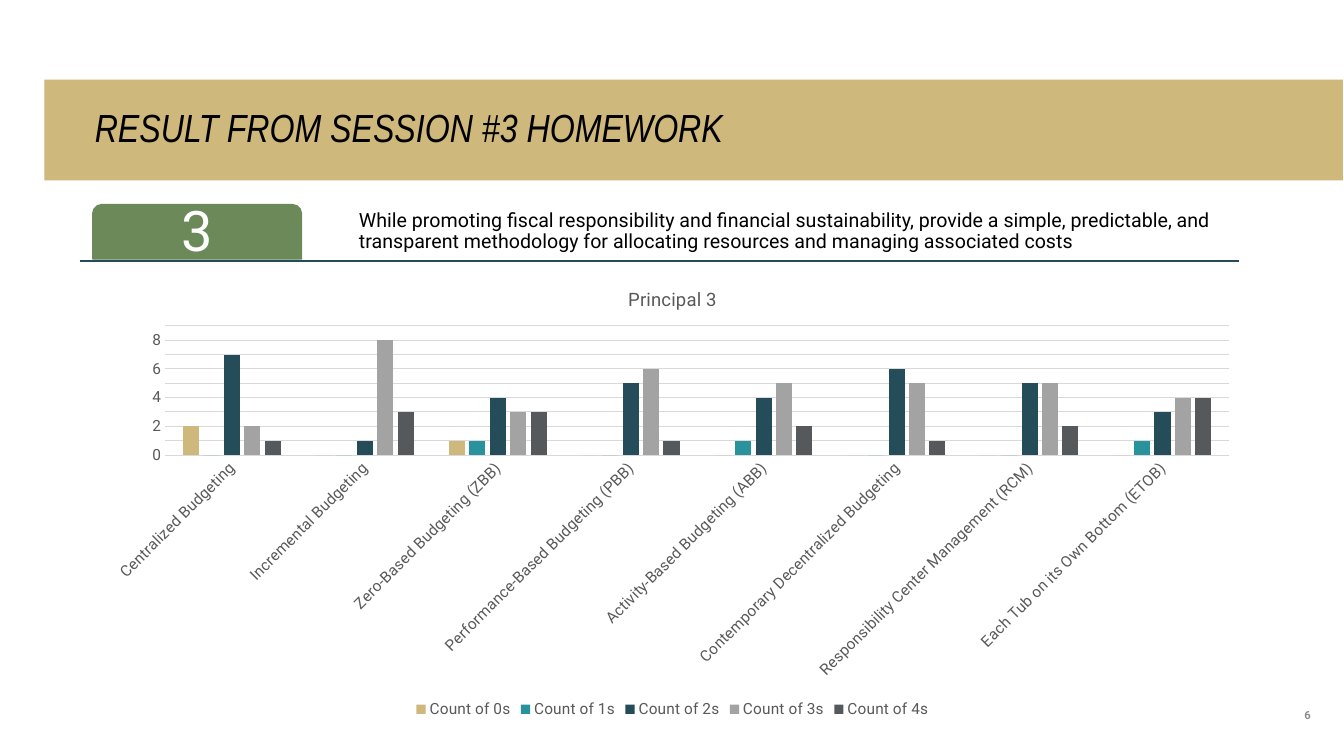
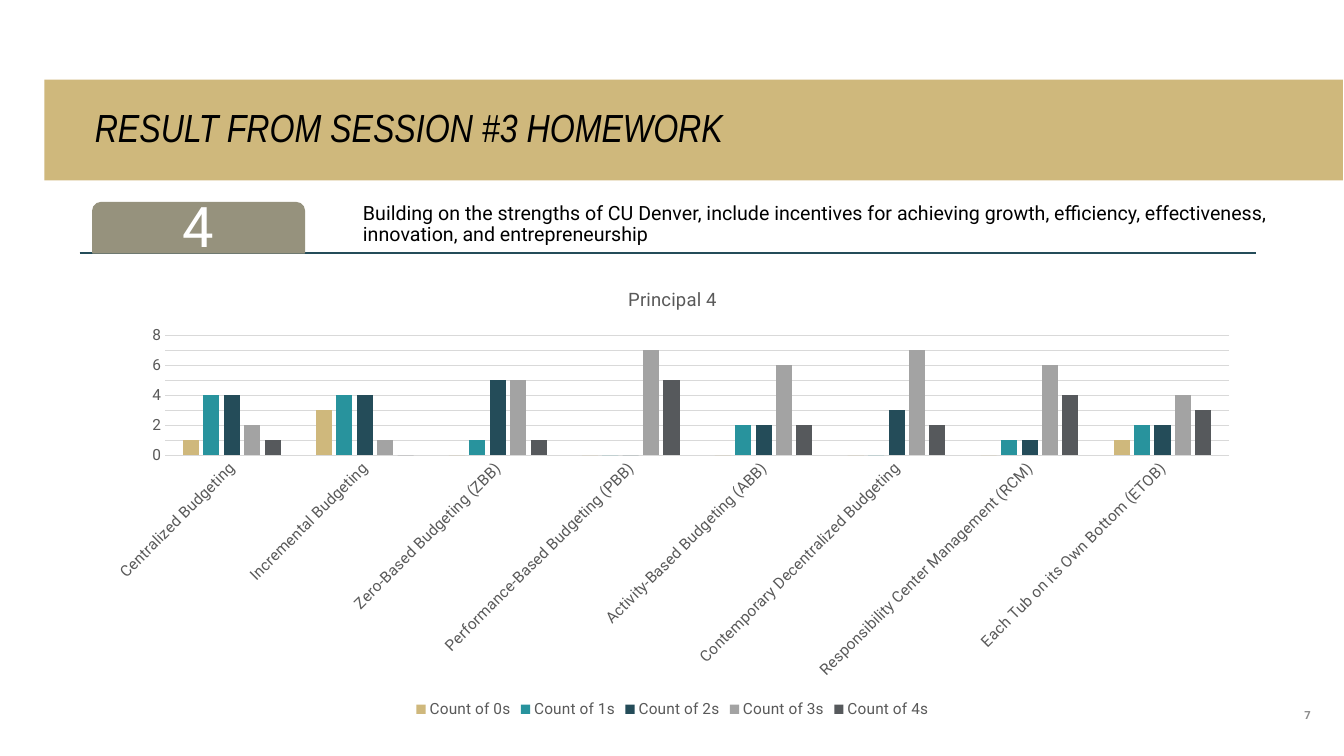
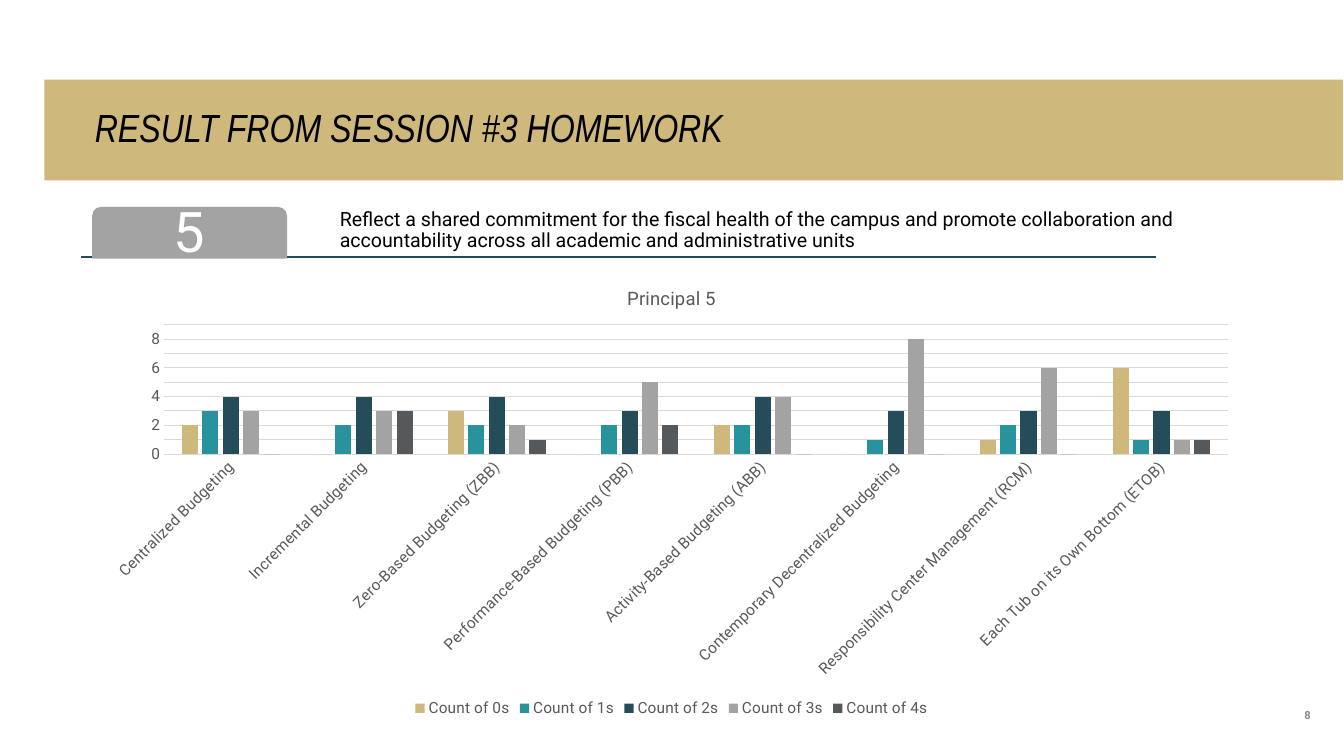
from dataclasses import dataclass

from lxml.etree import SubElement
from pptx import Presentation
from pptx.chart.data import CategoryChartData
from pptx.dml.color import RGBColor
from pptx.enum.chart import XL_CHART_TYPE, XL_LEGEND_POSITION, XL_TICK_MARK
from pptx.enum.shapes import MSO_CONNECTOR, MSO_SHAPE
from pptx.enum.text import MSO_ANCHOR, MSO_AUTO_SIZE, PP_ALIGN
from pptx.oxml.ns import qn
from pptx.slide import Slide
from pptx.text.text import Font, TextFrame
from pptx.util import Inches, Pt

# Shared style
COLORS = {
    "gold": "CFB87C", "teal": "28939D", "navy": "244C59", "gray": "A3A3A3",
    "slate": "56595C", "green": "6B8959", "taupe": "96927D", "grid": "D9D9D9",
    "label": "595959", "number": "8C8C8C", "black": "000000", "white": "FFFFFF",
}
TITLE = "RESULT FROM SESSION #3 HOMEWORK"
TITLE_FONT, BODY_FONT = "Arial Narrow", "Roboto"

CATEGORIES = (
    "Centralized Budgeting",
    "Incremental Budgeting",
    "Zero-Based Budgeting (ZBB)",
    "Performance-Based Budgeting (PBB)",
    "Activity-Based Budgeting (ABB)",
    "Contemporary Decentralized Budgeting",
    "Responsibility Center Management (RCM)",
    "Each Tub on its Own Bottom (ETOB)",
)
SERIES_COLORS = ("gold", "teal", "navy", "gray", "slate")


@dataclass(frozen=True)
class Box:
    left: float
    top: float
    width: float
    height: float

    def inches(self) -> tuple[int, ...]:
        return tuple(Inches(v) for v in (self.left, self.top, self.width, self.height))


@dataclass(frozen=True)
class Principle:
    number: int
    page: int
    text: str
    color: str
    tab: Box
    text_box: Box
    rule: tuple[float, float, float]  # left, right, height on the slide
    chart: Box
    axis_max: int
    counts: tuple[tuple[int, ...], ...]  # one row per score, 0 to 4


PRINCIPLES = (
    Principle(
        3, 6,
        "While promoting fiscal responsibility and financial sustainability, provide a "
        "simple, predictable, and transparent methodology for allocating resources and "
        "managing associated costs",
        "green", Box(0.92, 2.03, 2.07, 0.54), Box(3.53, 2.03, 9.02, 0.53),
        (0.79, 12.29, 2.59), Box(0.92, 2.67, 11.5, 4.5), 9,
        ((2, 0, 1, 0, 0, 0, 0, 0),
         (0, 0, 1, 0, 1, 0, 0, 1),
         (7, 1, 4, 5, 4, 6, 5, 3),
         (2, 8, 3, 6, 5, 5, 5, 4),
         (1, 3, 3, 1, 2, 1, 2, 4)),
    ),
    Principle(
        4, 7,
        "Building on the strengths of CU Denver, include incentives for achieving growth, "
        "efficiency, effectiveness, innovation, and entrepreneurship",
        "taupe", Box(0.92, 2.01, 2.1, 0.5), Box(3.57, 1.98, 9.15, 0.5),
        (0.79, 12.46, 2.51), Box(0.92, 2.67, 11.5, 4.5), 8,
        ((1, 3, 0, 0, 0, 0, 0, 1),
         (4, 4, 1, 0, 2, 0, 1, 2),
         (4, 4, 5, 0, 2, 3, 1, 2),
         (2, 1, 5, 7, 6, 7, 6, 4),
         (1, 0, 1, 5, 2, 2, 4, 3)),
    ),
    Principle(
        5, 8,
        "Reflect a shared commitment for the fiscal health of the campus and promote "
        "collaboration and accountability across all academic and administrative units",
        "gray", Box(0.92, 2.06, 1.92, 0.5), Box(3.34, 2.04, 8.36, 0.5),
        (0.8, 11.47, 2.55), Box(0.91, 2.66, 11.5, 4.5), 9,
        ((2, 0, 3, 0, 2, 0, 1, 6),
         (3, 2, 2, 2, 2, 1, 2, 1),
         (4, 4, 4, 3, 4, 3, 3, 3),
         (3, 3, 2, 5, 4, 8, 6, 1),
         (0, 3, 1, 2, 0, 0, 0, 1)),
    ),
)


def rgb(name: str) -> RGBColor:
    return RGBColor.from_string(COLORS[name])


def set_font(font: Font, size: float, color: str, name: str = BODY_FONT,
             bold: bool = False, italic: bool = False) -> None:
    font.size, font.name = Pt(size), name
    font.bold, font.italic = bold, italic
    font.color.rgb = rgb(color)


def set_text(tf: TextFrame, text: str, size: float, color: str,
             insets: tuple[float, float, float, float],
             align: PP_ALIGN = PP_ALIGN.LEFT, anchor: MSO_ANCHOR = MSO_ANCHOR.MIDDLE,
             name: str = BODY_FONT, bold: bool = False, italic: bool = False) -> None:
    tf.word_wrap = True
    tf.auto_size = MSO_AUTO_SIZE.NONE
    tf.vertical_anchor = anchor
    tf.margin_left, tf.margin_top, tf.margin_right, tf.margin_bottom = map(Inches, insets)
    p = tf.paragraphs[0]
    p.text = text
    p.alignment, p.line_spacing = align, 0.9
    set_font(p.font, size, color, name, bold, italic)


def add_title(s: Slide) -> None:
    title = s.shapes.title
    title.left, title.top, title.width, title.height = Box(0.44, 0.79, 12.88, 1).inches()
    title.fill.solid()
    title.fill.fore_color.rgb = rgb("gold")
    set_text(title.text_frame, TITLE, 28, "black", (0.5, 0.05, 1, 0.05),
             name=TITLE_FONT, italic=True)


def add_page_number(s: Slide, page: int) -> None:
    box = s.shapes.add_textbox(*Box(12.15, 6.66, 0.85, 0.5).inches())
    set_text(box.text_frame, str(page), 8, "number", (0, 0, 0, 0),
             PP_ALIGN.RIGHT, MSO_ANCHOR.BOTTOM, bold=True)


def add_heading(s: Slide, item: Principle) -> None:
    # Rule under the heading
    left, right, y = map(Inches, item.rule)
    rule = s.shapes.add_connector(MSO_CONNECTOR.STRAIGHT, left, y, right, y)
    rule.line.color.rgb = rgb("navy")
    rule.line.width = Pt(1)
    SubElement(rule._element.spPr, qn("a:effectLst"))

    # Statement
    box = s.shapes.add_textbox(*item.text_box.inches())
    set_text(box.text_frame, item.text, 14, "black", (0.03,) * 4)

    # Numbered tab
    tab = s.shapes.add_shape(MSO_SHAPE.ROUND_2_SAME_RECTANGLE, *item.tab.inches())
    tab.shadow.inherit = False
    tab.fill.solid()
    tab.fill.fore_color.rgb = tab.line.color.rgb = rgb(item.color)
    tab.line.width = Pt(1)
    set_text(tab.text_frame, str(item.number), 40, "white", (0.08,) * 4, PP_ALIGN.CENTER)


def add_counts_chart(s: Slide, item: Principle) -> None:
    data = CategoryChartData(number_format="General")
    data.categories = CATEGORIES
    for score, counts in enumerate(item.counts):
        data.add_series(f"Count of {score}s", counts)
    chart = s.shapes.add_chart(XL_CHART_TYPE.COLUMN_CLUSTERED, *item.chart.inches(), data).chart
    set_font(chart.font, 11, "black")

    # Title and legend
    chart.has_title = True
    p = chart.chart_title.text_frame.paragraphs[0]
    p.text = f"Principal {item.number}"
    set_font(p.font, 13.2, "label")
    chart.chart_title.include_in_layout = False
    chart.has_legend = True
    chart.legend.position = XL_LEGEND_POSITION.BOTTOM
    chart.legend.include_in_layout = False
    set_font(chart.legend.font, 11, "label")

    # Columns
    plot = chart.plots[0]
    plot.gap_width, plot.overlap, plot.vary_by_categories = 219, -27, False
    for series, color in zip(plot.series, SERIES_COLORS):
        series.format.fill.solid()
        series.format.fill.fore_color.rgb = rgb(color)

    # Axes
    cat_axis, val_axis = chart.category_axis, chart.value_axis
    for axis in (cat_axis, val_axis):
        axis.major_tick_mark = axis.minor_tick_mark = XL_TICK_MARK.NONE
        set_font(axis.tick_labels.font, 11, "label")
    val_axis.minimum_scale, val_axis.maximum_scale, val_axis.major_unit = 0, item.axis_max, 1
    val_axis.has_major_gridlines = True
    val_axis.format.line.fill.background()
    for line in (cat_axis.format.line, val_axis.major_gridlines.format.line):
        line.color.rgb = rgb("grid")
        line.width = Pt(0.75)
    # Slanted category labels
    cat_axis._element.xpath("c:txPr/a:bodyPr")[0].set("rot", str(-45 * 60000))


def main() -> None:
    prs = Presentation()
    prs.slide_width, prs.slide_height = Inches(13.33), Inches(7.5)
    for item in PRINCIPLES:
        s = prs.slides.add_slide(prs.slide_layouts[5])
        add_title(s)
        add_page_number(s, item.page)
        add_heading(s, item)
        add_counts_chart(s, item)
    prs.save("out.pptx")


if __name__ == "__main__":
    main()
